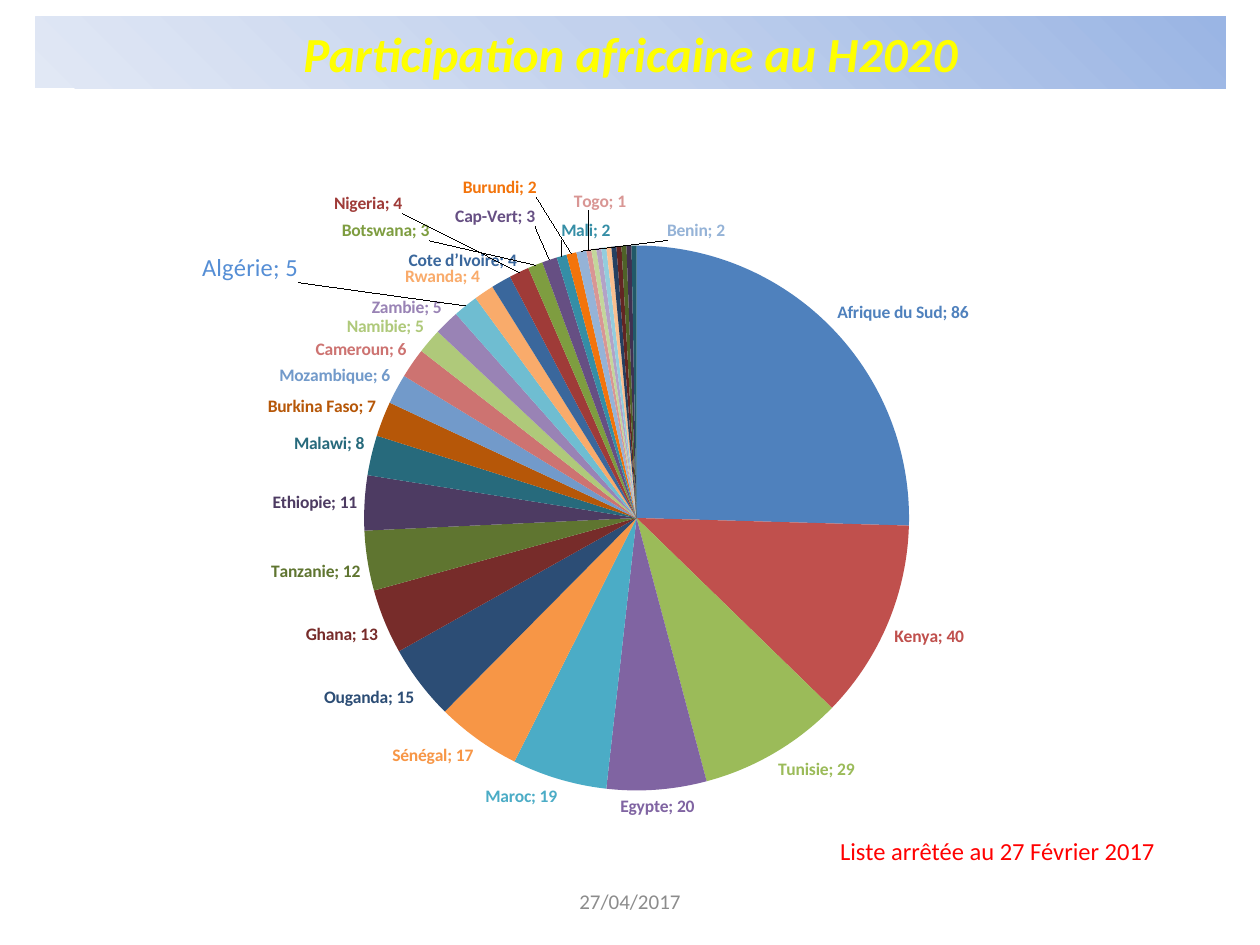
from typing import NamedTuple, Optional

from lxml import etree
from pptx import Presentation
from pptx.chart.data import CategoryChartData
from pptx.dml.color import RGBColor
from pptx.enum import chart as charts, shapes, text
from pptx.oxml import parse_xml
from pptx.oxml.ns import nsdecls, qn
from pptx.util import Pt

FONT = "Calibri"
YELLOW = RGBColor(0xFF, 0xFF, 0x00)
RED = RGBColor(0xFF, 0x00, 0x00)
GREY = RGBColor(0x8C, 0x8C, 0x8C)
BLACK = RGBColor(0x00, 0x00, 0x00)
ALGERIA_BLUE = RGBColor(0x55, 0x8E, 0xD5)
BANNER_STOPS = ((0, "9AB5E4"), (50, "C2D1ED"), (100, "E1E8F5"))
CHART_WIDTH, CHART_HEIGHT = 618, 519
HIGHLIGHTED = "Algérie"


class Country(NamedTuple):
    name: str
    projects: int
    color: str
    label_shift: Optional[tuple[float, float]] = None  # points from the usual place
    labelled: bool = True


COUNTRIES = [
    Country("Afrique du Sud", 86, "4F81BD"),
    Country("Kenya", 40, "C0504D"),
    Country("Tunisie", 29, "9BBB59"),
    Country("Egypte", 20, "8064A2"),
    Country("Maroc", 19, "4BACC6"),
    Country("Sénégal", 17, "F79646"),
    Country("Ouganda", 15, "2C4D75"),
    Country("Ghana", 13, "772C2A"),
    Country("Tanzanie", 12, "5F7530"),
    Country("Ethiopie", 11, "4D3B62"),
    Country("Malawi", 8, "276A7C"),
    Country("Burkina Faso", 7, "B65708"),
    Country("Mozambique", 6, "729ACA"),
    Country("Cameroun", 6, "CD7371"),
    Country("Namibie", 5, "AFC97A"),
    Country("Zambie", 5, "9983B5"),
    Country(HIGHLIGHTED, 5, "6FBDD1", (-93, -10)),
    Country("Rwanda", 4, "F9AB6B"),
    Country("Cote d’Ivoire", 4, "3A679C", (11, -3)),
    Country("Nigeria", 4, "9F3B38", (-65, -30)),
    Country("Botswana", 3, "7E9D40", (-59, -10)),
    Country("Cap-Vert", 3, "664F83", (-7, -15)),
    Country("Mali", 2, "358EA6", (29, -5)),
    Country("Burundi", 2, "F3740B", (-19, -28)),
    Country("Benin", 2, "95B3D7", (83, -2)),
    Country("Togo", 1, "D99694", (22, -18)),
    *(
        Country(name, 1, color, labelled=False)
        for name, color in (
            ("Swaziland", "C3D69B"),
            ("Maurice", "B3A2C7"),
            ("Mauritanie ", "93CDDD"),
            ("Lesotho", "FAC090"),
            ("Gabon ", "254061"),
            ("Seychelles", "632523"),
            ("Libéria", "4F6228"),
            ("Madagascar", "403152"),
            ("Libye", "215968"),
        )
    ),
]


def set_font(font, size: float, color: RGBColor, bold=False, italic=False) -> None:
    font.name, font.size = FONT, Pt(size)
    font.bold, font.italic = bold, italic
    font.color.rgb = color


def write(frame, content: str, *, size: float, color: RGBColor, bold=False,
          italic=False, align=None, anchor=None, wrap=True) -> None:
    frame.word_wrap = wrap
    if anchor is not None:
        frame.vertical_anchor = anchor
    paragraph = frame.paragraphs[0]
    if align is not None:
        paragraph.alignment = align
    run = paragraph.add_run()
    run.text = content
    set_font(run.font, size, color, bold, italic)


def manual_layout(**values):
    """Build a chart layout element; the values keep the order given."""
    items = "".join(f'<c:{tag} val="{value}"/>' for tag, value in values.items())
    return parse_xml(f'<c:layout {nsdecls("c")}><c:manualLayout>{items}'
                     '</c:manualLayout></c:layout>')


def show_name_and_value(labels) -> None:
    """Switch on category and value, joined by a semicolon."""
    for tag in ("showVal", "showCatName"):
        labels.find(qn(f"c:{tag}")).set("val", "1")
    separator = etree.Element(qn("c:separator"))
    separator.text = "; "
    labels.find(qn("c:showBubbleSize")).addnext(separator)


def format_label(series, index: int, country: Country) -> None:
    label = series.points[index].data_label
    label.position = charts.XL_LABEL_POSITION.OUTSIDE_END
    if country.name == HIGHLIGHTED:
        write(label.text_frame, f"{country.name}; {country.projects}",
              size=14, color=ALGERIA_BLUE)
    else:
        set_font(label.font, 10, RGBColor.from_string(country.color), bold=True)
    element = series._element.xpath(f"c:dLbls/c:dLbl[c:idx/@val='{index}']")[0]
    if not country.labelled:
        for child in list(element)[1:]:
            element.remove(child)
        etree.SubElement(element, qn("c:delete")).set("val", "1")
        return
    show_name_and_value(element)
    if country.label_shift:
        for old in element.findall(qn("c:layout")):
            element.remove(old)
        dx, dy = country.label_shift
        element.find(qn("c:idx")).addnext(
            manual_layout(x=round(dx / CHART_WIDTH, 4), y=round(dy / CHART_HEIGHT, 4)))


def add_participation_pie(slide) -> None:
    data = CategoryChartData()
    data.categories = [country.name for country in COUNTRIES]
    data.add_series("Series 1", [country.projects for country in COUNTRIES])
    pie = slide.shapes.add_chart(charts.XL_CHART_TYPE.PIE, Pt(48), Pt(49),
                                 Pt(CHART_WIDTH), Pt(CHART_HEIGHT), data).chart
    pie.has_legend = pie.has_title = False
    set_font(pie.font, 10, BLACK)
    plot_area = pie._chartSpace.xpath("c:chart/c:plotArea")[0]
    for old in plot_area.findall(qn("c:layout")):
        plot_area.remove(old)
    plot_area.insert(0, manual_layout(layoutTarget="inner", xMode="edge", yMode="edge",
                                      x=0.022, y=0.176, w=0.978, h=0.6))
    series = pie.plots[0].series[0]
    series.data_labels.position = charts.XL_LABEL_POSITION.OUTSIDE_END
    show_name_and_value(series._element.find(qn("c:dLbls")))
    for index, country in enumerate(COUNTRIES):
        slice_format = series.points[index].format
        slice_format.fill.solid()
        slice_format.fill.fore_color.rgb = RGBColor.from_string(country.color)
        slice_format.line.fill.background()
        format_label(series, index, country)


def add_banner(slide, title: str) -> None:
    banner = slide.shapes.add_shape(shapes.MSO_SHAPE.RECTANGLE,
                                    Pt(20), Pt(9.5), Pt(680.5), Pt(41))
    banner.shadow.inherit = False
    banner.line.fill.background()
    stops = "".join(f'<a:gs pos="{percent * 1000}"><a:srgbClr val="{color}"/></a:gs>'
                    for percent, color in BANNER_STOPS)
    banner._element.spPr.find(qn("a:prstGeom")).addnext(parse_xml(
        f'<a:gradFill {nsdecls("a")} rotWithShape="1"><a:gsLst>{stops}</a:gsLst>'
        '<a:path path="circle"><a:fillToRect l="100000" b="100000"/></a:path>'
        '</a:gradFill>'))
    write(banner.text_frame, title, size=28, color=YELLOW, bold=True, italic=True,
          align=text.PP_ALIGN.CENTER)


def main() -> None:
    deck = Presentation()
    deck.slide_width, deck.slide_height = Pt(720), Pt(540)
    slide = deck.slides.add_slide(deck.slide_layouts[6])
    date = slide.shapes.add_textbox(Pt(246), Pt(500.5), Pt(228), Pt(29))
    write(date.text_frame, "27/04/2017", size=12, color=GREY,
          align=text.PP_ALIGN.CENTER, anchor=text.MSO_ANCHOR.MIDDLE)
    add_participation_pie(slide)
    add_banner(slide, "Participation africaine au H2020")
    closing_note = slide.shapes.add_textbox(Pt(473), Pt(474), Pt(196), Pt(24.5))
    write(closing_note.text_frame, "Liste arrêtée au 27 Février 2017",
          size=14, color=RED, wrap=False)
    deck.save("out.pptx")


if __name__ == "__main__":
    main()
